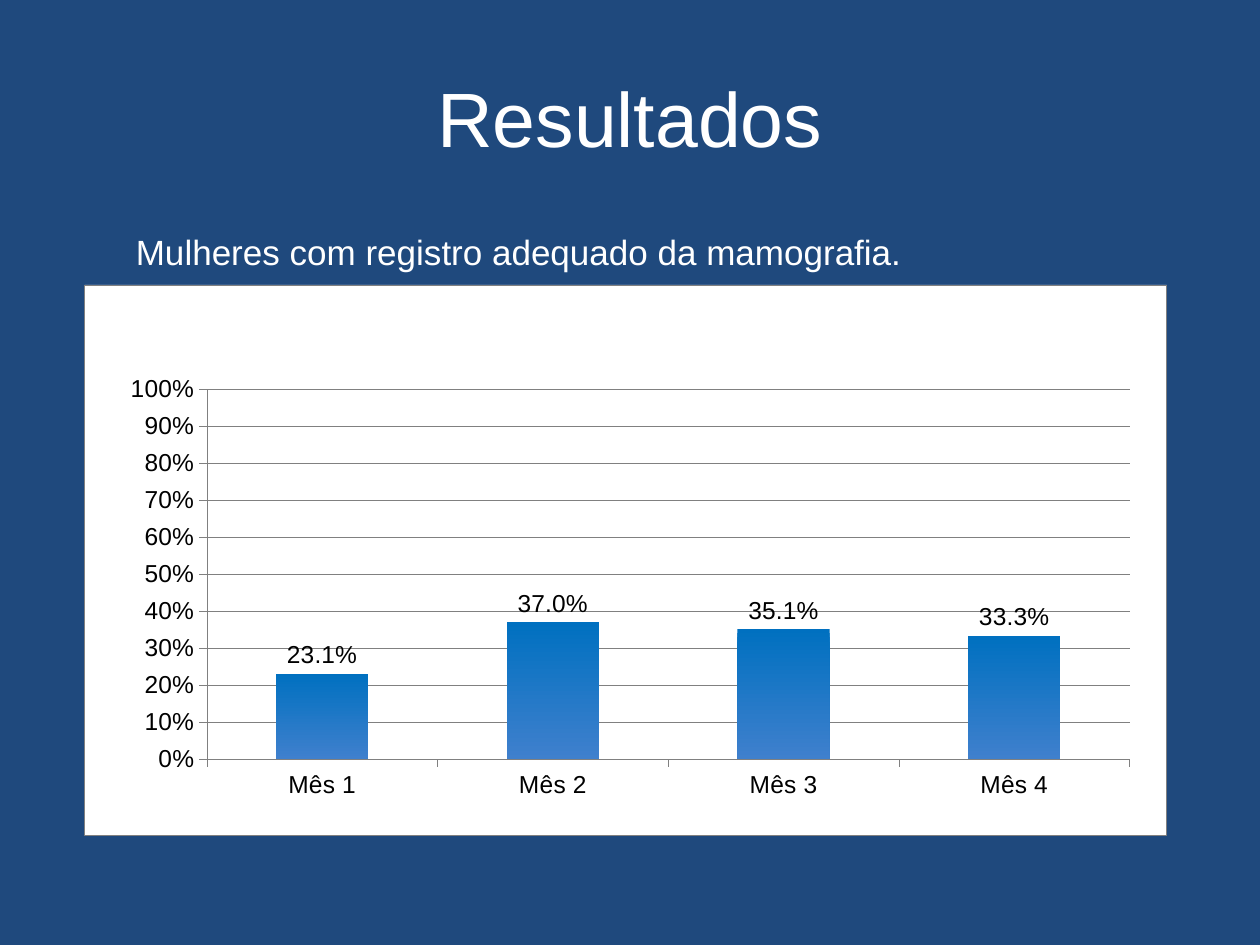
from lxml.etree import SubElement
from pptx import Presentation
from pptx.chart.data import CategoryChartData
from pptx.dml.color import RGBColor
from pptx.enum.chart import XL_CHART_TYPE as Kind, XL_LABEL_POSITION as Spot, XL_TICK_MARK as Tick
from pptx.enum.text import MSO_ANCHOR as Anchor, PP_ALIGN as Align
from pptx.oxml import parse_xml
from pptx.oxml.ns import nsdecls, qn
from pptx.util import Inches, Pt

TITLE = "Resultados"
NOTE = "Mulheres com registro adequado da mamografia."
MONTHS = ["Mês 1", "Mês 2", "Mês 3", "Mês 4"]
RATES = [0.231, 0.37, 0.351, 0.333]
PLOT = {"x": 0.113, "y": 0.19, "w": 0.853, "h": 0.672}
NAVY, WHITE, BLACK, GREY = "1F497D", "FFFFFF", "000000", "808080"
SHADES = ["0070C0", "3F80CD"]


def tint(code):
    return RGBColor.from_string(code)


def style(font, size, color):
    font.name, font.size, font.bold = "Arial", Pt(size), False
    font.color.rgb = tint(color)


def write(shape, text, box, size, align=Align.LEFT, anchor=Anchor.TOP):
    shape.left, shape.top, shape.width, shape.height = map(Inches, box)
    frame = shape.text_frame
    frame.word_wrap, frame.vertical_anchor = True, anchor
    para = frame.paragraphs[0]
    para.alignment = align
    run = para.add_run()
    run.text = text
    style(run.font, size, WHITE)


def rule(line):
    line.color.rgb, line.width = tint(GREY), Pt(0.25)


def panel(edge):
    return parse_xml(
        f'<c:spPr {nsdecls("c", "a")}><a:solidFill><a:srgbClr val="{WHITE}"/></a:solidFill>'
        f'<a:ln w="{Pt(0.25)}">{edge}</a:ln></c:spPr>')


def frame_chart(chart):
    space = chart.element
    area = space.find(".//" + qn("c:plotArea"))
    for old in area.findall(qn("c:layout")):
        area.remove(old)
    layout = parse_xml(f'<c:layout {nsdecls("c")}><c:manualLayout/></c:layout>')
    marks = {"layoutTarget": "inner", "xMode": "edge", "yMode": "edge", **PLOT}
    for name, val in marks.items():
        SubElement(layout[0], qn("c:" + name)).set("val", str(val))
    area.insert(0, layout)
    area.append(panel("<a:noFill/>"))
    edge = f'<a:solidFill><a:srgbClr val="{GREY}"/></a:solidFill>'
    space.find(qn("c:chart")).addnext(panel(edge))


def draw_chart(slide):
    data = CategoryChartData(number_format="0.0%")
    data.categories = MONTHS
    data.add_series("Series 1", RATES)
    box = map(Inches, (0.67, 2.26, 8.59, 4.37))
    chart = slide.shapes.add_chart(Kind.COLUMN_CLUSTERED, *box, data).chart
    chart.has_title = chart.has_legend = False
    style(chart.font, 14, BLACK)
    for axis in (chart.category_axis, chart.value_axis):
        axis.major_tick_mark = Tick.OUTSIDE
        axis.minor_tick_mark = Tick.NONE
        rule(axis.format.line)
    axis = chart.value_axis
    axis.minimum_scale, axis.maximum_scale, axis.major_unit = 0, 1, 0.1
    axis.tick_labels.number_format = "0%"
    axis.tick_labels.number_format_is_linked = False
    rule(axis.major_gridlines.format.line)

    plot = chart.plots[0]
    plot.gap_width, plot.vary_by_categories = 150, False
    fill = plot.series[0].format.fill
    fill.gradient()
    fill.gradient_angle = 270
    for stop, shade, place in zip(fill.gradient_stops, SHADES, (0, 1)):
        stop.color.rgb, stop.position = tint(shade), place
    labels = plot.series[0].data_labels
    labels.show_value = True
    labels.number_format, labels.number_format_is_linked = "0.0%", False
    labels.position = Spot.OUTSIDE_END
    style(labels.font, 14, BLACK)
    frame_chart(chart)


def main():
    """Build the results slide with its column chart."""
    deck = Presentation()
    deck.slide_width, deck.slide_height = Inches(10), Inches(7.5)
    slide = deck.slides.add_slide(deck.slide_layouts[5])
    back = slide.background.fill
    back.solid()
    back.fore_color.rgb = tint(NAVY)
    write(slide.shapes.title, TITLE, (0.5, 0.3, 9, 1.25), 44, Align.CENTER, Anchor.MIDDLE)
    draw_chart(slide)
    box = (0.98, 1.78, 8.5, 0.44)
    write(slide.shapes.add_textbox(*map(Inches, box)), NOTE, box, 20)
    deck.save("out.pptx")


if __name__ == "__main__":
    main()
